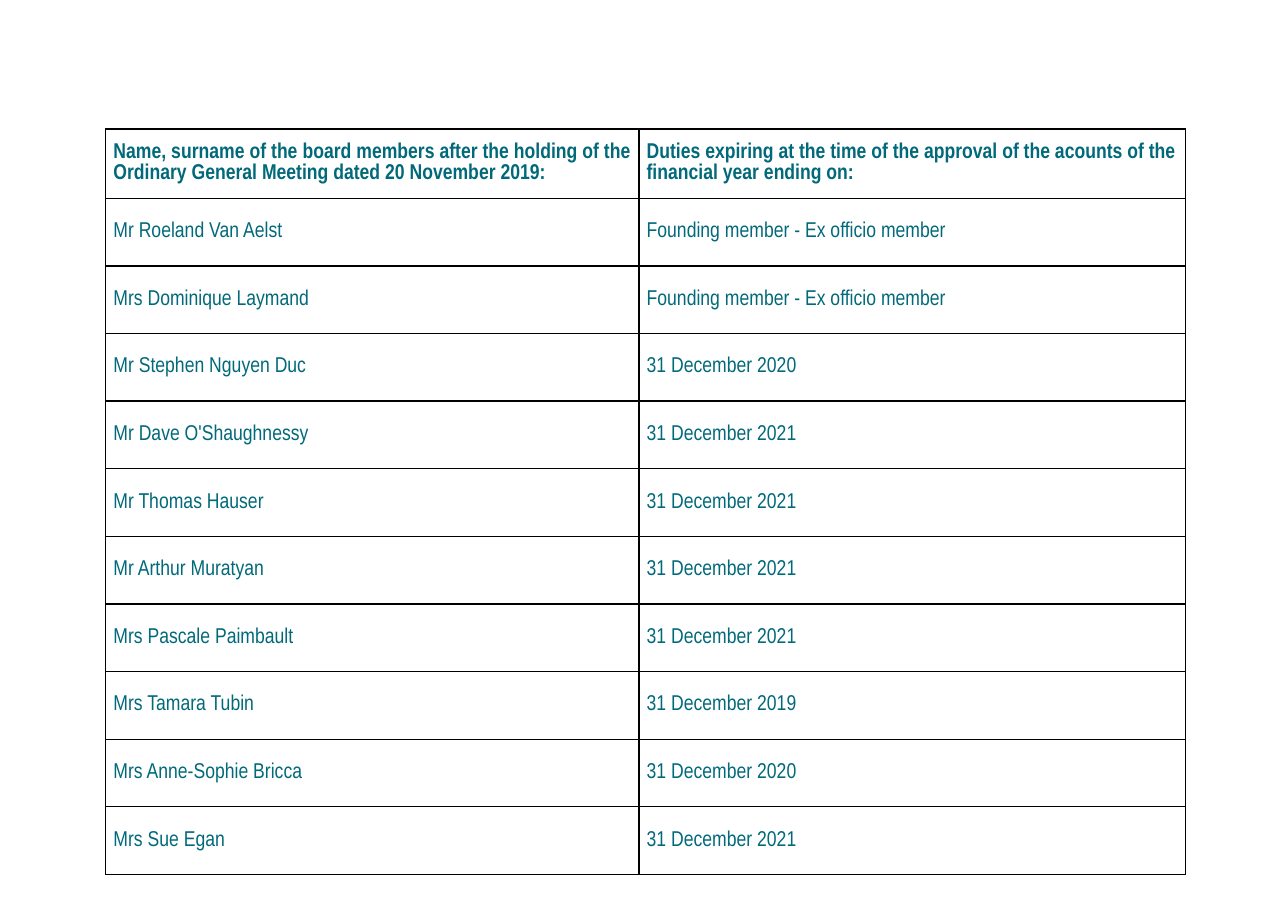
from lxml.etree import SubElement
from pptx import Presentation
from pptx.dml.color import RGBColor
from pptx.enum.text import MSO_ANCHOR as Anchor, PP_ALIGN as Align
from pptx.oxml.ns import qn
from pptx.util import Emu, Pt

PX = 9144  # one hundredth of an inch
TEAL, BLACK = "00697A", "000000"
FOUNDING = "Founding member - Ex officio member"

HEADERS = (
    "Name, surname of the board members after the holding of "
    "the Ordinary General Meeting dated 20 November 2019:",
    "Duties expiring at the time of the approval of the acounts of the "
    "financial year ending on:",
)
MEMBERS = [
    ("Mr Roeland Van Aelst", FOUNDING),
    ("Mrs Dominique Laymand", FOUNDING),
    ("Mr Stephen Nguyen Duc", "31 December 2020"),
    ("Mr Dave O'Shaughnessy", "31 December 2021"),
    ("Mr Thomas Hauser", "31 December 2021"),
    ("Mr Arthur Muratyan", "31 December 2021"),
    ("Mrs Pascale Paimbault", "31 December 2021"),
    ("Mrs Tamara Tubin", "31 December 2019"),
    ("Mrs Anne-Sophie Bricca", "31 December 2020"),
    ("Mrs Sue Egan", "31 December 2021"),
]
LEFT, TOP = 96, 117
COLUMN_WIDTHS = (484, 496)
HEADER_HEIGHT, BODY_HEIGHT = 63, 614


def px(length):
    return Emu(length * PX)


def color(hex_string):
    return RGBColor.from_string(hex_string)


def add_borders(cell, hex_string, width):
    properties = cell._tc.get_or_add_tcPr()
    for side in ("a:lnL", "a:lnR", "a:lnT", "a:lnB"):
        line = SubElement(properties, qn(side), w=str(Pt(width)))
        fill = SubElement(line, qn("a:solidFill"))
        SubElement(fill, qn("a:srgbClr"), val=hex_string)


def write_cell(cell, text, align, bold, space_after):
    # Frame of the cell
    add_borders(cell, BLACK, 1)
    cell.fill.background()
    cell.vertical_anchor = Anchor.MIDDLE
    cell.margin_left = cell.margin_right = px(7)
    cell.margin_top = cell.margin_bottom = 0

    # Text of the cell
    para = cell.text_frame.paragraphs[0]
    para.alignment = align
    para.space_after = Pt(space_after)
    span = para.add_run()
    span.text = text
    span.font.name = "Arial Narrow"
    span.font.size = Pt(14)
    span.font.bold = bold
    span.font.color.rgb = color(TEAL)


def add_member_table(page):
    rows = [HEADERS, *MEMBERS]
    frame = page.shapes.add_table(
        len(rows), len(HEADERS), px(LEFT), px(TOP),
        px(sum(COLUMN_WIDTHS)), px(HEADER_HEIGHT + BODY_HEIGHT))
    table = frame.table
    table.first_row = table.horz_banding = False

    # Column widths and row heights
    for column, width in zip(table.columns, COLUMN_WIDTHS):
        column.width = px(width)
    for row in table.rows:
        row.height = px(BODY_HEIGHT) // len(MEMBERS)
    table.rows[0].height = px(HEADER_HEIGHT)

    # Header and members
    for row_index, texts in enumerate(rows):
        is_header = row_index == 0
        for column_index, text in enumerate(texts):
            is_left = is_header and column_index == 1
            write_cell(table.cell(row_index, column_index), text,
                       align=Align.LEFT if is_left else Align.JUSTIFY,
                       bold=is_header,
                       space_after=0 if text == FOUNDING else 12)


def main():
    deck = Presentation()
    deck.slide_width, deck.slide_height = px(1169), px(827)
    page = deck.slides.add_slide(deck.slide_layouts[6])
    add_member_table(page)
    deck.save("out.pptx")


if __name__ == "__main__":
    main()
